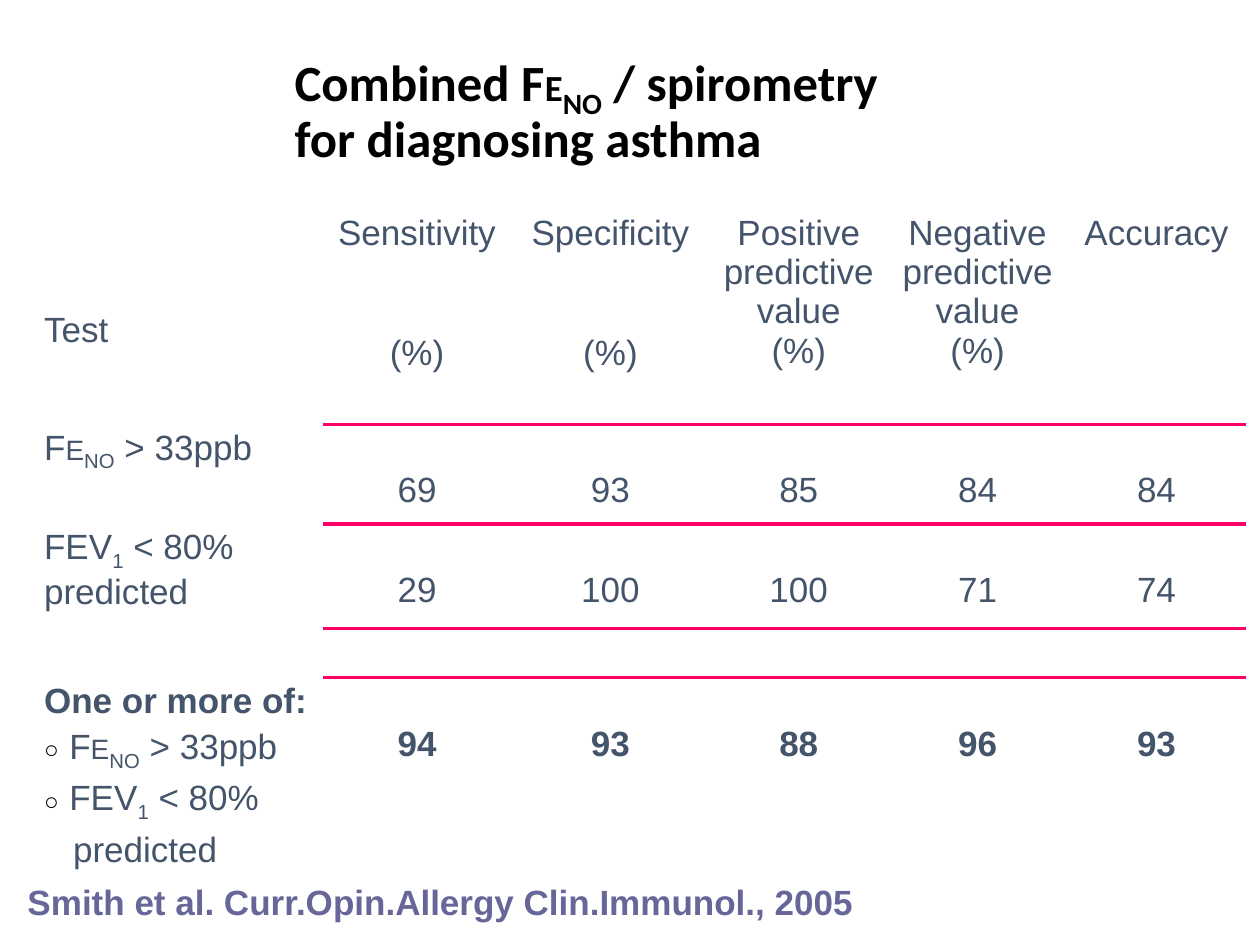
from dataclasses import dataclass
from typing import NamedTuple

from lxml.etree import SubElement
from pptx import Presentation
from pptx.dml.color import RGBColor
from pptx.enum.text import MSO_ANCHOR as Anchor, PP_ALIGN as Align
from pptx.oxml.ns import qn
from pptx.util import Inches, Pt


@dataclass(frozen=True)
class Theme:
    text: str = "44546A"
    title: str = "000000"
    source: str = "666699"
    rule: str = "FF0066"
    body_font: str = "Arial"
    title_font: str = "Calibri"
    body_size: int = 20
    small_size: int = 16
    title_size: int = 29
    title_small_size: int = 21
    rule_width: float = 2.25
    gap: float = 4


class Span(NamedTuple):
    text: str
    size: int | None = None
    subscript: bool = False


class Para(NamedTuple):
    spans: list[Span]
    before: float = 0
    bold: bool = False
    bullet: bool = False
    indent: float = 0


class Row(NamedTuple):
    height: float
    label: list[Para]
    values: list[str]
    bold: bool = False


THEME = Theme()
COLUMNS = [2.31, 1.5, 1.57, 1.42, 1.42, 1.42]
HEADER_HEIGHT, SPACER_HEIGHT = 1.67, 0.39
LINE = 23  # points from one line of body text to the next
HEADERS = [  # heading, unit, lines left free above the unit
    ("Sensitivity", "(%)", 2),
    ("Specificity", "(%)", 2),
    ("Positive predictive value", "(%)", 0),
    ("Negative predictive value", "(%)", 0),
    ("Accuracy", "", 0),
]


def feno(size: int) -> list[Span]:
    return [Span("E", size), Span("NO", subscript=True)]


FENO_TEST = [Span("F"), *feno(THEME.small_size), Span(" > 33ppb")]
FEV_TEST = [Span("FEV"), Span("1", subscript=True), Span(" < 80%")]
ROWS = [
    Row(0.79, [Para(FENO_TEST)], ["69", "93", "85", "84", "84"]),
    Row(0.83, [Para([*FEV_TEST, Span(" predicted")])], ["29", "100", "100", "71", "74"]),
    Row(1.99, [
        Para([Span("One or more of:")], bold=True),
        Para(FENO_TEST, THEME.gap, bullet=True, indent=0.2),
        Para(FEV_TEST, THEME.gap, bullet=True, indent=0.2),
        Para([Span("predicted")], THEME.gap, indent=0.23),
    ], ["94", "93", "88", "96", "93"], bold=True),
]


def add_bullet(props) -> None:
    color = SubElement(props, qn("a:buClr"))
    SubElement(color, qn("a:srgbClr"), val=THEME.title)
    SubElement(props, qn("a:buSzPct"), val="70000")
    SubElement(props, qn("a:buFont"), typeface=THEME.body_font)
    SubElement(props, qn("a:buChar"), char="○")


def write(frame, paras: list[Para], *, size: int = THEME.body_size,
          font: str = THEME.body_font, color: str = THEME.text,
          align: Align = Align.LEFT, line_spacing: float | None = None) -> None:
    """Fill a text frame; a newline inside a span becomes a line break."""
    frame.word_wrap = True
    for index, para in enumerate(paras):
        paragraph = frame.add_paragraph() if index else frame.paragraphs[0]
        paragraph.alignment = align
        paragraph.line_spacing = line_spacing
        paragraph.space_before = Pt(para.before)
        props = paragraph._p.get_or_add_pPr()
        if para.indent:
            props.set("marL", str(Inches(para.indent)))
            props.set("indent", str(Inches(-para.indent if para.bullet else 0)))
        if para.bullet:
            add_bullet(props)
        for span in para.spans:
            for part, text in enumerate(span.text.split("\n")):
                if part:
                    paragraph.add_line_break()
                run = paragraph.add_run()
                run.text = text
                run.font.name = font
                run.font.size = Pt(span.size or size)
                run.font.bold = para.bold
                run.font.color.rgb = RGBColor.from_string(color)
                if span.subscript:
                    run._r.get_or_add_rPr().set("baseline", "-25000")


def style_cell(cell, ruled: set[str]) -> None:
    """Rule the named edges of a cell and clear its other edges and its fill."""
    props = cell._tc.get_or_add_tcPr()
    for edge in "LRTB":
        line = SubElement(props, qn(f"a:ln{edge}"), w=str(Pt(THEME.rule_width)))
        if edge in ruled:
            fill = SubElement(line, qn("a:solidFill"))
            SubElement(fill, qn("a:srgbClr"), val=THEME.rule)
        else:
            SubElement(line, qn("a:noFill"))
    cell.fill.background()


def fill_cell(cell, paras: list[Para], top: float, align: Align = Align.CENTER,
              right: float = 0.1) -> None:
    cell.margin_left, cell.margin_right = Inches(0.1), Inches(right)
    cell.margin_top, cell.margin_bottom = Inches(top), Inches(0)
    write(cell.text_frame, paras, align=align)


def add_results(page) -> None:
    heights = [HEADER_HEIGHT, *(row.height for row in ROWS)]
    heights.insert(-1, SPACER_HEIGHT)
    spacer = len(heights) - 2
    table = page.shapes.add_table(
        len(heights), len(COLUMNS), Inches(0.25), Inches(1.7),
        Inches(sum(COLUMNS)), Inches(sum(heights))).table
    table.first_row = table.horz_banding = False
    for column, width in zip(table.columns, COLUMNS):
        column.width = Inches(width)
    for index, height in enumerate(heights):
        table.rows[index].height = Inches(height)
        ruled = {edge for edge, wanted in (("T", index > 0), ("B", index < len(heights) - 1))
                 if wanted}
        for number in range(len(COLUMNS)):
            style_cell(table.cell(index, number), ruled if number else set())

    fill_cell(table.cell(0, 0), [Para([Span("Test")])], 0.77, Align.LEFT)
    for number, (heading, unit, free) in enumerate(HEADERS, 1):
        paras = [Para([Span(heading)])]
        if unit:
            paras.append(Para([Span(unit)], free * LINE))
        fill_cell(table.cell(0, number), paras, 0)
    for number in range(len(COLUMNS)):
        cell = table.cell(spacer, number)
        cell.margin_top = cell.margin_bottom = 0
    result_rows = [index for index in range(1, len(heights)) if index != spacer]
    for index, row in zip(result_rows, ROWS):
        fill_cell(table.cell(index, 0), row.label, 0.03, Align.LEFT, right=0.04)
        for number, value in enumerate(row.values, 1):
            fill_cell(table.cell(index, number), [Para([Span(value)], bold=row.bold)], 0.37)


def add_text(page, left: float, top: float, width: float, height: float,
             para: Para, **text_format) -> None:
    box = page.shapes.add_textbox(Inches(left), Inches(top), Inches(width), Inches(height))
    box.text_frame.vertical_anchor = Anchor.MIDDLE
    write(box.text_frame, [para], **text_format)


def main() -> None:
    deck = Presentation()
    deck.slide_width, deck.slide_height = Inches(10), Inches(7.5)
    page = deck.slides.add_slide(deck.slide_layouts[6])
    add_results(page)
    add_text(page, 0.12, 6.94, 6.77, 0.43,
             Para([Span("Smith et al. Curr.Opin.Allergy Clin.Immunol., 2005")], bold=True),
             color=THEME.source)
    title = [Span("Combined F"), *feno(THEME.title_small_size),
             Span(" / spirometry\nfor diagnosing asthma")]
    add_text(page, 2.24, 0.25, 6.3, 1.25, Para(title, bold=True), size=THEME.title_size,
             font=THEME.title_font, color=THEME.title, line_spacing=0.9)
    deck.save("out.pptx")


if __name__ == "__main__":
    main()
